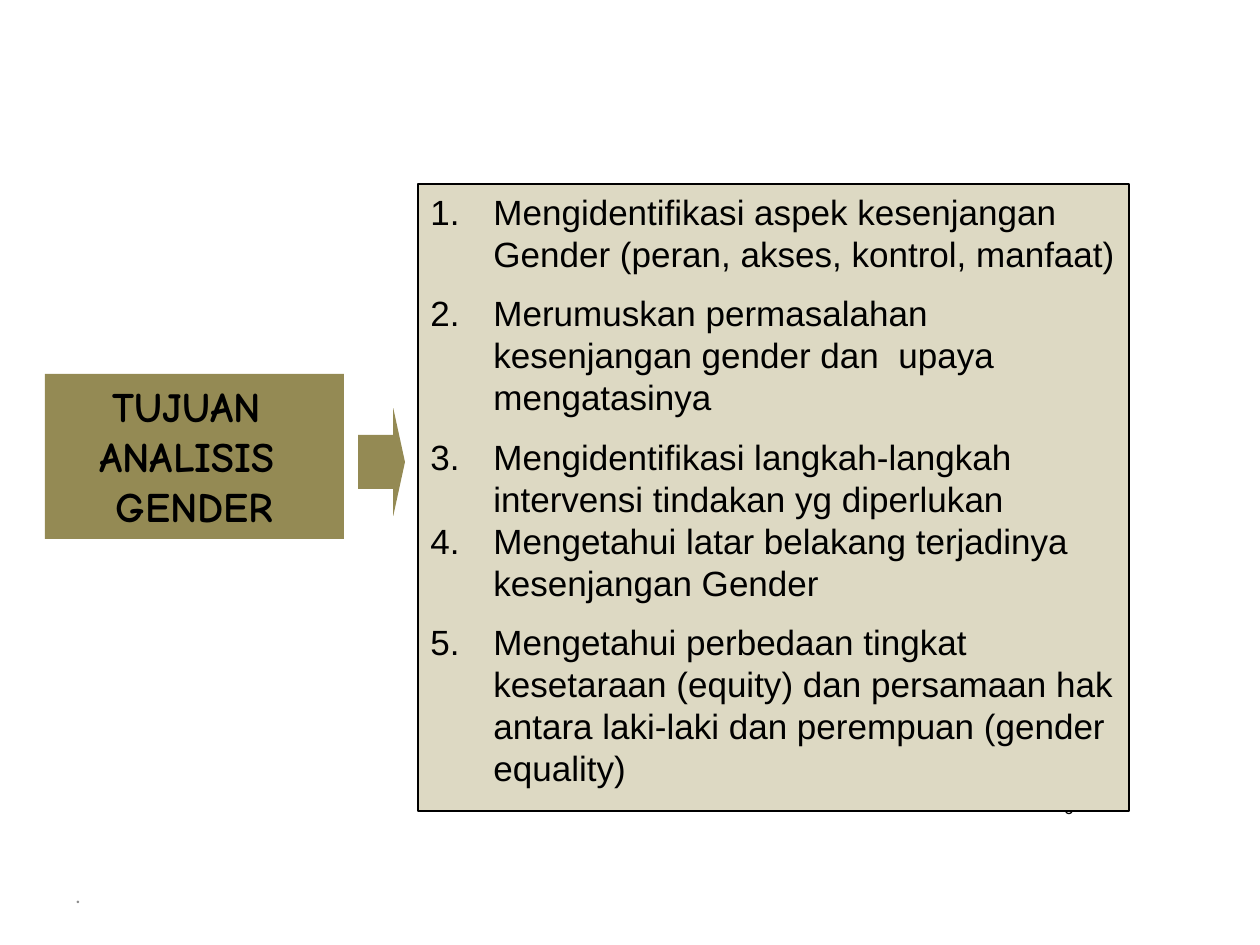
from dataclasses import dataclass

from lxml import etree
from pptx import Presentation
from pptx import util as u
from pptx.dml.color import RGBColor
from pptx.enum import shapes, text
from pptx.oxml.ns import qn

PX = 914400 / 126  # EMU in one px


@dataclass(frozen=True)
class Theme:
    sand: str = "DDD9C3"
    olive: str = "948A54"
    ink: str = "000000"
    grey: str = "8C8C8C"
    body: int = 20
    head: int = 24
    foot: int = 12
    page: int = 10


@dataclass(frozen=True)
class Box:
    left: int
    top: int
    width: int
    height: int

    def emu(self) -> list[int]:
        return [px(n) for n in (self.left, self.top, self.width, self.height)]


@dataclass(frozen=True)
class Style:
    font: str
    size: int
    color: str
    bold: bool = False
    align: text.PP_ALIGN = text.PP_ALIGN.LEFT


@dataclass(frozen=True)
class Goal:
    words: str
    gap: int = 0


THEME = Theme()
BODY = Style("Arial", THEME.body, THEME.ink)
HEAD = Style("Comic Neue", THEME.head, THEME.ink, True, text.PP_ALIGN.CENTER)
PAGE = Style("Arial", THEME.page, THEME.ink, align=text.PP_ALIGN.RIGHT)
FOOT = Style("Calibri", THEME.foot, THEME.grey)

GAP = THEME.body // 2
GOALS = [
    Goal("Mengidentifikasi aspek kesenjangan Gender (peran, akses, kontrol, manfaat)", GAP),
    Goal("Merumuskan permasalahan kesenjangan gender dan  upaya mengatasinya", GAP),
    Goal("Mengidentifikasi langkah-langkah intervensi tindakan yg diperlukan"),
    Goal("Mengetahui latar belakang terjadinya kesenjangan Gender", GAP),
    Goal("Mengetahui perbedaan tingkat kesetaraan (equity) dan persamaan hak "
         "antara laki-laki dan perempuan (gender equality)"),
]
TOPIC = ["TUJUAN ", "ANALISIS ", "GENDER"]


def px(n: int) -> int:
    return round(n * PX)


def write(shape, lines: list[str], style: Style,
          anchor=text.MSO_ANCHOR.TOP) -> list:
    """Fill the shape with one paragraph a line and return the paragraphs."""
    frame = shape.text_frame
    frame.word_wrap = True
    frame.vertical_anchor = anchor
    for i, line in enumerate(lines):
        para = frame.add_paragraph() if i else frame.paragraphs[0]
        para.alignment = style.align
        run = para.add_run()
        run.text = line
        font = run.font
        font.name, font.size, font.bold = style.font, u.Pt(style.size), style.bold
        font.color.rgb = RGBColor.from_string(style.color)
    return list(frame.paragraphs)


def block(parent, kind, box: Box, fill: str, line: str | None = None):
    shape = parent.add_shape(kind, *box.emu())
    shape.shadow.inherit = False
    shape.fill.solid()
    shape.fill.fore_color.rgb = RGBColor.from_string(fill)
    if line:
        shape.line.color.rgb = RGBColor.from_string(line)
        shape.line.width = u.Pt(0.75)
    else:
        shape.line.fill.background()
    return shape


def number(para, gap: int) -> None:
    """Give the paragraph a hanging number and the space after it."""
    para.space_after = u.Pt(gap)
    props = para._p.get_or_add_pPr()
    props.set("marL", str(px(63)))
    props.set("indent", str(-px(63)))
    etree.SubElement(props, qn("a:buAutoNum"), type="arabicPeriod")


def main() -> None:
    deck = Presentation()
    deck.slide_width, deck.slide_height = px(1260), px(945)
    tree = deck.slides.add_slide(deck.slide_layouts[6]).shapes
    kinds = shapes.MSO_SHAPE

    write(tree.add_textbox(*Box(849, 791, 237, 66).emu()), ["6"], PAGE)

    panel = block(tree, kinds.RECTANGLE, Box(418, 184, 711, 627),
                  THEME.sand, THEME.ink)
    paras = write(panel, [goal.words for goal in GOALS], BODY)
    for para, goal in zip(paras, GOALS):
        number(para, goal.gap)

    group = tree.add_group_shape().shapes
    topic = block(group, kinds.RECTANGLE, Box(45, 374, 299, 165), THEME.olive)
    write(topic, TOPIC, HEAD)
    arrow = block(group, kinds.RIGHT_ARROW, Box(358, 408, 47, 108), THEME.olive)
    arrow.adjustments[0], arrow.adjustments[1] = 0.5, 0.25

    foot = tree.add_textbox(*Box(63, 876, 294, 38).emu())
    write(foot, ["."], FOOT, text.MSO_ANCHOR.MIDDLE)

    deck.save("out.pptx")


if __name__ == "__main__":
    main()
